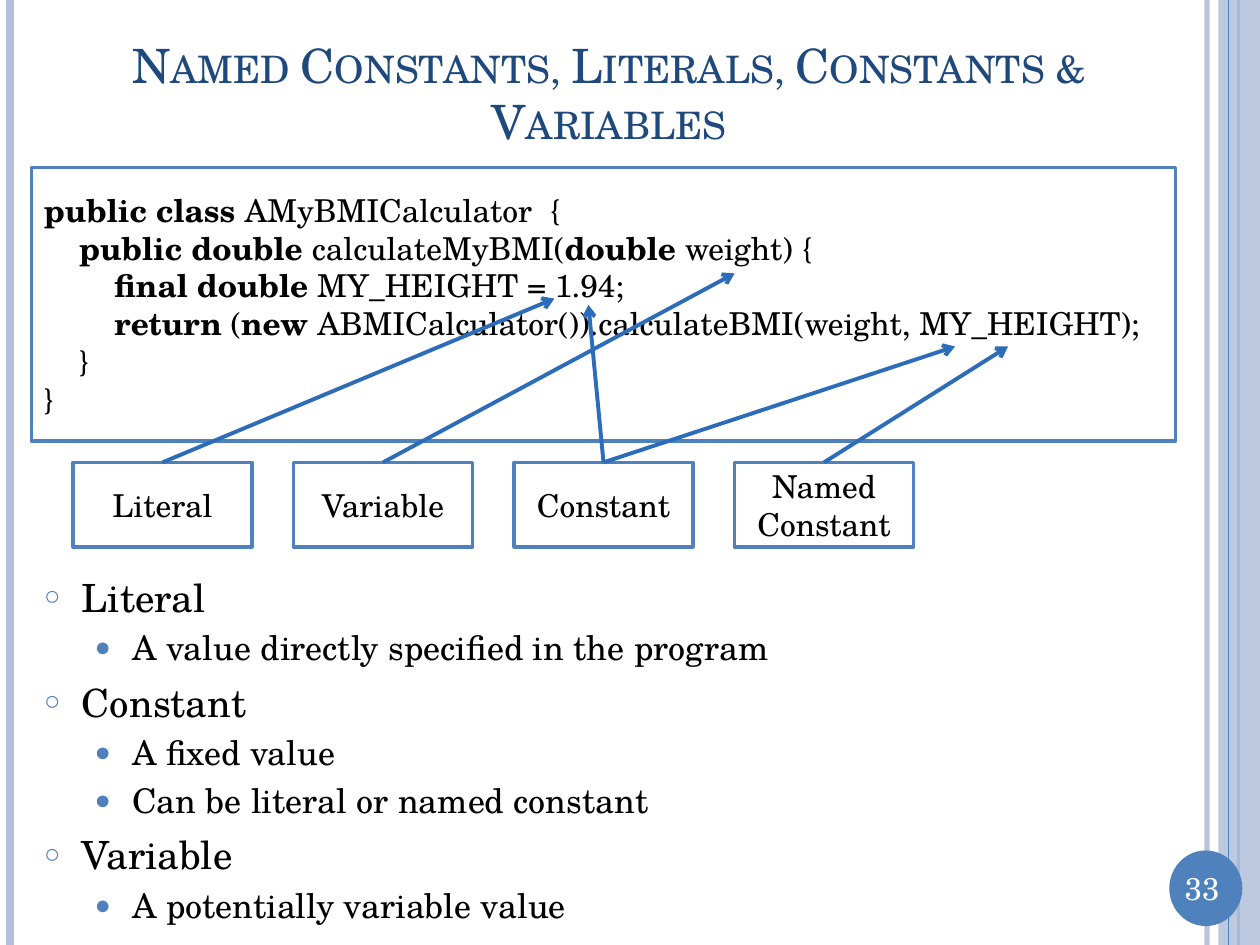
import pptx
import pptx.util
import pptx.dml.color
import pptx.enum.shapes
import pptx.enum.text
import pptx.oxml.ns
from lxml import etree

Inches, Pt = pptx.util.Inches, pptx.util.Pt
RGBColor = pptx.dml.color.RGBColor
SHAPE = pptx.enum.shapes.MSO_SHAPE
ALIGN = pptx.enum.text.PP_ALIGN
MIDDLE = pptx.enum.text.MSO_ANCHOR.MIDDLE
NO_AUTOFIT = pptx.enum.text.MSO_AUTO_SIZE.NONE
qn = pptx.oxml.ns.qn

FONT = "TeX Gyre Schola"
BLUE = RGBColor(0x4F, 0x81, 0xBD)
PALE = RGBColor(0xB3, 0xC1, 0xDB)
ARROW = RGBColor(0x2C, 0x6C, 0xB9)
NAVY = RGBColor(0x1F, 0x49, 0x7D)
BLACK = RGBColor(0, 0, 0)
WHITE = RGBColor(255, 255, 255)

TITLE = "Named Constants, Literals, Constants & Variables"
# (indent level, [(text, bold), ...])
CODE = [
    (0, [("public class ", True), ("AMyBMICalculator  {", False)]),
    (1, [("public double ", True), ("calculateMyBMI(", False),
         ("double", True), (" weight) {", False)]),
    (2, [("final double", True), (" MY_HEIGHT = 1.94;", False)]),
    (2, [("return", True), (" (", False), ("new ", True),
         ("ABMICalculator()).calculateBMI(weight, MY_HEIGHT);", False)]),
    (1, [("}", False)]),
    (0, [("}", False)]),
]
# (label, arrow targets)
LABELS = [
    ("Literal", [(4.4, 2.37)]),
    ("Variable", [(5.83, 2.17)]),
    ("Constant", [(7.58, 2.75), (4.67, 2.42)]),
    ("Named Constant", [(8, 2.75)]),
]
BULLETS = [
    (0, "Literal"),
    (1, "A value directly specified in the program"),
    (0, "Constant"),
    (1, "A fixed value"),
    (1, "Can be literal or named constant"),
    (0, "Variable"),
    (1, "A potentially variable value"),
]
# per level: left margin, size, space before, bullet, bullet percent
LEVELS = [(0.3, 22.2, 6, "○", 70), (0.7, 19.4, 4, "●", 80)]
# (x, colour, width, opacity percent)
RULES_BELOW_BAND = [(9.58, PALE, 3, 93), (0.08, PALE, 4.5, 100), (9.83, BLUE, 1.5, 100)]
RULES_ABOVE_BAND = [(9.75, BLUE, 0.75, 100)]


def set_opacity(properties, percent):
    color = properties.find(".//" + qn("a:srgbClr"))
    etree.SubElement(color, qn("a:alpha"), val=str(percent * 1000))


def style(span, size, color, bold=False):
    span.font.name = FONT
    span.font.size = Pt(size)
    span.font.color.rgb = color
    span.font.bold = bold


def write(frame, text, size, color):
    """Fill a frame with one centred line of text."""
    frame.text = text
    frame.word_wrap = True
    frame.vertical_anchor = MIDDLE
    para = frame.paragraphs[0]
    para.alignment = ALIGN.CENTER
    style(para.runs[0], size, color)


def place(shape, left, top, width, height):
    shape.left, shape.top = Inches(left), Inches(top)
    shape.width, shape.height = Inches(width), Inches(height)


def add_line(page, start, end, color, width):
    line = page.shapes.add_connector(
        pptx.enum.shapes.MSO_CONNECTOR.STRAIGHT, *map(Inches, start + end))
    line.line.color.rgb = color
    line.line.width = Pt(width)
    etree.SubElement(line._element.spPr, qn("a:effectLst"))
    return line


def add_rules(page, rules):
    for x, color, width, opacity in rules:
        line = add_line(page, (x, 0), (x, 7.5), color, width)
        if opacity < 100:
            set_opacity(line._element.spPr, opacity)


def add_filled(page, kind, area, color):
    shape = page.shapes.add_shape(kind, *map(Inches, area))
    shape.shadow.inherit = False
    shape.fill.solid()
    shape.fill.fore_color.rgb = color
    shape.line.fill.background()
    return shape


def add_box(page, *area):
    box = add_filled(page, SHAPE.RECTANGLE, area, WHITE)
    box.line.color.rgb = BLUE
    box.line.width = Pt(2)
    return box


def add_frame(page):
    add_rules(page, RULES_BELOW_BAND)
    band = add_filled(page, SHAPE.RECTANGLE, (9.67, 0, 0.33, 7.5), PALE)
    set_opacity(band._element.spPr, 87)
    add_rules(page, RULES_ABOVE_BAND)
    add_filled(page, SHAPE.OVAL, (9.28, 6.75, 0.58, 0.6), BLUE)
    number = page.shapes.add_textbox(*map(Inches, (9.25, 6.85, 0.58, 0.4)))
    write(number.text_frame, "33", 18, WHITE)


def add_title(page):
    title = page.shapes.title
    place(title, 0.5, 0.3, 8.67, 0.87)
    write(title.text_frame, TITLE, 27, NAVY)
    title.text_frame.auto_size = NO_AUTOFIT
    title.text_frame.paragraphs[0].runs[0].font._element.set("cap", "small")


def add_code(page):
    frame = add_box(page, 0.25, 1.33, 9.08, 2.17).text_frame
    frame.word_wrap = True
    frame.vertical_anchor = MIDDLE
    for index, (level, spans) in enumerate(CODE):
        para = frame.add_paragraph() if index else frame.paragraphs[0]
        para.alignment = ALIGN.LEFT
        para._p.get_or_add_pPr().set("marL", str(Inches(0.28 * level)))
        for text, bold in spans:
            span = para.add_run()
            span.text = text
            style(span, 18, BLACK, bold)


def add_bullets(page):
    body = page.placeholders[1]
    place(body, 0.25, 4.5, 8.92, 2.83)
    frame = body.text_frame
    frame.text = "\n".join(text for _, text in BULLETS)
    frame.auto_size = NO_AUTOFIT
    for para, (level, _) in zip(frame.paragraphs, BULLETS):
        margin, size, before, bullet, percent = LEVELS[level]
        para.level = level
        para.space_before = Pt(before)
        style(para.runs[0], size, BLACK)
        properties = para._p.get_or_add_pPr()
        properties.set("marL", str(Inches(margin)))
        properties.set("indent", str(Inches(-0.3)))
        color = etree.SubElement(properties, qn("a:buClr"))
        etree.SubElement(color, qn("a:srgbClr"), val=str(BLUE))
        etree.SubElement(properties, qn("a:buSzPct"), val=str(percent * 1000))
        etree.SubElement(properties, qn("a:buChar"), char=bullet)


def add_labels(page):
    top, width = 3.67, 1.42
    for index, (label, targets) in enumerate(LABELS):
        left = 0.58 + 1.75 * index
        box = add_box(page, left, top, width, 0.67)
        write(box.text_frame, label, 18, BLACK)
        for target in targets:
            arrow = add_line(page, (left + width / 2, top), target, ARROW, 2.25)
            arrow.begin_connect(box, 0)
            etree.SubElement(arrow.line._get_or_add_ln(), qn("a:tailEnd"), type="arrow")


def main():
    deck = pptx.Presentation()
    deck.slide_width, deck.slide_height = Inches(10), Inches(7.5)
    page = deck.slides.add_slide(deck.slide_layouts[1])
    add_frame(page)
    add_title(page)
    add_code(page)
    add_bullets(page)
    add_labels(page)
    deck.save("out.pptx")


if __name__ == "__main__":
    main()
